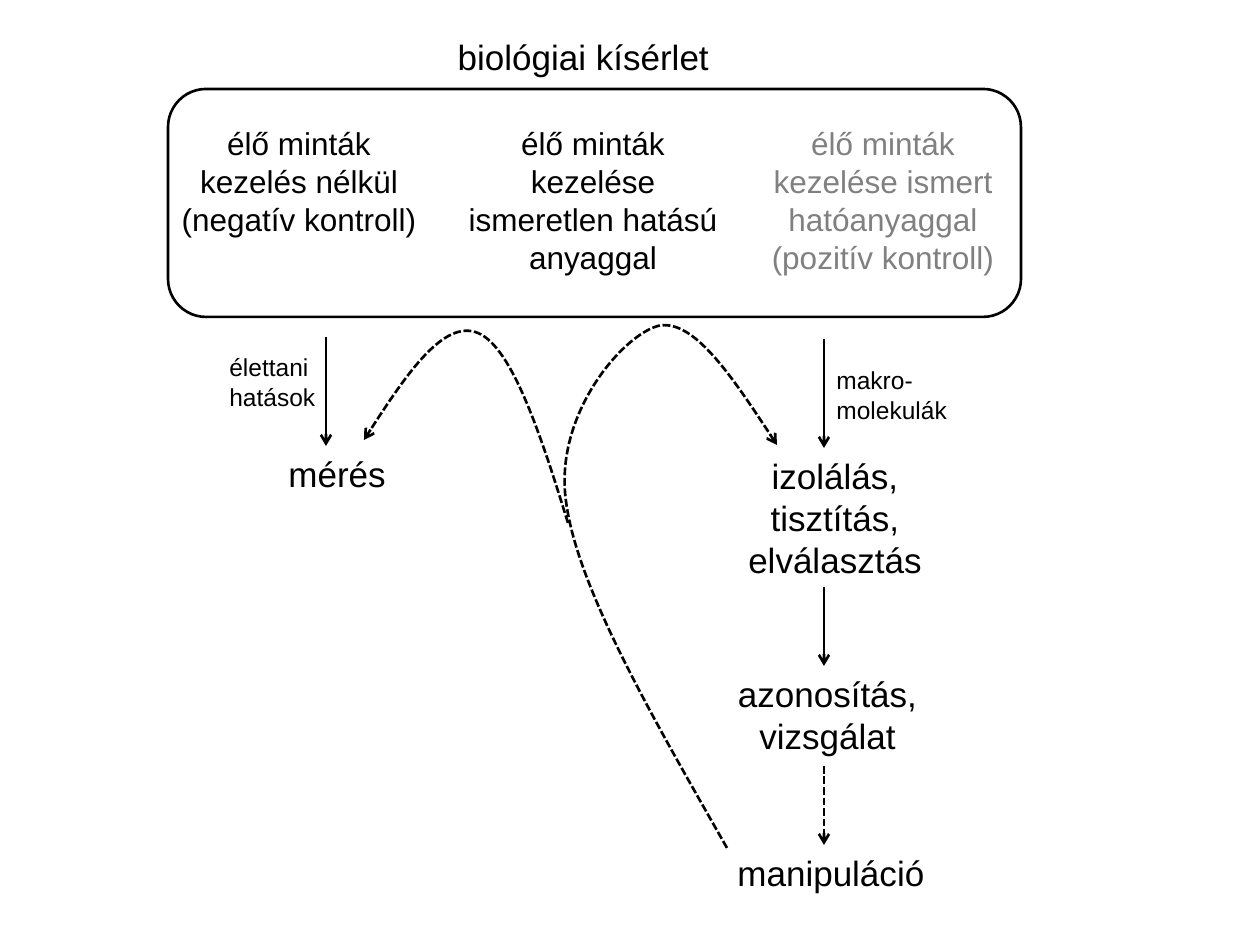
"""Build the slide with the flow of a biological experiment."""
import lxml.etree
import pptx
import pptx.dml.color
import pptx.enum.dml
import pptx.enum.shapes
import pptx.enum.text
import pptx.oxml.ns
import pptx.util

BLACK = pptx.dml.color.RGBColor(0, 0, 0)
GRAY = pptx.dml.color.RGBColor(128, 128, 128)
PX = 914400 / 126
LEFT = pptx.enum.text.PP_ALIGN.LEFT
CENTER = pptx.enum.text.PP_ALIGN.CENTER
qn = pptx.oxml.ns.qn


def write_text(shape, box, text, size, align, color=BLACK):
    shape.left, shape.top, shape.width, shape.height = [round(v * PX) for v in box]
    frame = shape.text_frame
    frame.text = text
    frame.word_wrap = False
    frame.auto_size = pptx.enum.text.MSO_AUTO_SIZE.SHAPE_TO_FIT_TEXT
    frame.vertical_anchor = pptx.enum.text.MSO_ANCHOR.TOP
    for paragraph in frame.paragraphs:
        paragraph.alignment = align
        paragraph.font.name = "Arial"
        paragraph.font.size = pptx.util.Pt(size)
        paragraph.font.color.rgb = color


def style_arrow(shape, dashed):
    shape.line.color.rgb = BLACK
    shape.line.width = pptx.util.Pt(1.5)
    if dashed:
        shape.line.dash_style = pptx.enum.dml.MSO_LINE.SQUARE_DOT
    properties = shape._element.spPr
    lxml.etree.SubElement(properties.find(qn("a:ln")), qn("a:tailEnd"), type="arrow")
    lxml.etree.SubElement(properties, qn("a:effectLst"))


presentation = pptx.Presentation()
presentation.slide_width = round(1260 * PX)
presentation.slide_height = round(945 * PX)
slide = presentation.slides.add_slide(presentation.slide_layouts[5])
shapes = slide.shapes

write_text(shapes.title, (445, 29, 278, 55), "biológiai kísérlet", 20, LEFT)

frame_box = [round(v * PX) for v in (168, 89, 853, 228)]
experiment = shapes.add_shape(pptx.enum.shapes.MSO_SHAPE.ROUNDED_RECTANGLE, *frame_box)
experiment.shadow.inherit = False
experiment.fill.background()
experiment.line.color.rgb = BLACK
experiment.line.width = pptx.util.Pt(1.5)

labels = [
    ((168, 118, 262, 127), "élő minták\nkezelés nélkül\n(negatív kontroll)", 18, CENTER, BLACK),
    ((455, 118, 276, 165), "élő minták\nkezelése\nismeretlen hatású\nanyaggal", 18, CENTER, BLACK),
    ((758, 118, 250, 165), "élő minták\nkezelése ismert\nhatóanyaggal\n(pozitív kontroll)", 18, CENTER, GRAY),
    ((217, 346, 112, 72), "élettani\nhatások", 14, LEFT, BLACK),
    ((824, 359, 136, 72), "makro-\nmolekulák", 14, LEFT, BLACK),
    ((276, 446, 123, 55), "mérés", 20, LEFT, BLACK),
    ((735, 448, 200, 140), "izolálás,\ntisztítás,\nelválasztás", 20, CENTER, BLACK),
    ((725, 666, 205, 97), "azonosítás,\nvizsgálat", 20, CENTER, BLACK),
    ((725, 845, 214, 55), "manipuláció", 20, LEFT, BLACK),
]
for box, text, size, align, color in labels:
    write_text(shapes.add_textbox(0, 0, 0, 0), box, text, size, align, color)

arrows = [
    (326, 337, 446, False),
    (824, 339, 448, False),
    (824, 587, 666, False),
    (824, 766, 845, True),
]
for x, top, bottom, dashed in arrows:
    ends = [round(v * PX) for v in (x, top, x, bottom)]
    arrow = shapes.add_connector(pptx.enum.shapes.MSO_CONNECTOR.STRAIGHT, *ends)
    style_arrow(arrow, dashed)

feedback_curves = [
    [(727, 848), (653, 718), (577, 588), (566, 501), (554, 415), (622, 336),
     (658, 326), (693, 318), (735, 381), (777, 445)],
    [(568, 523), (541, 435), (512, 347), (478, 333), (444, 319), (403, 379), (364, 440)],
]
for start, *points in feedback_curves:
    builder = shapes.build_freeform(*start, scale=PX)
    builder.add_line_segments(points, close=False)
    curve = builder.convert_to_shape()
    curve.fill.background()
    outline = curve._element.spPr.find(".//" + qn("a:path"))
    segments = outline.findall(qn("a:lnTo"))
    for first in range(0, len(segments), 3):
        bezier = lxml.etree.SubElement(outline, qn("a:cubicBezTo"))
        for segment in segments[first:first + 3]:
            bezier.append(segment[0])
            outline.remove(segment)
    style_arrow(curve, True)

presentation.save("out.pptx")
